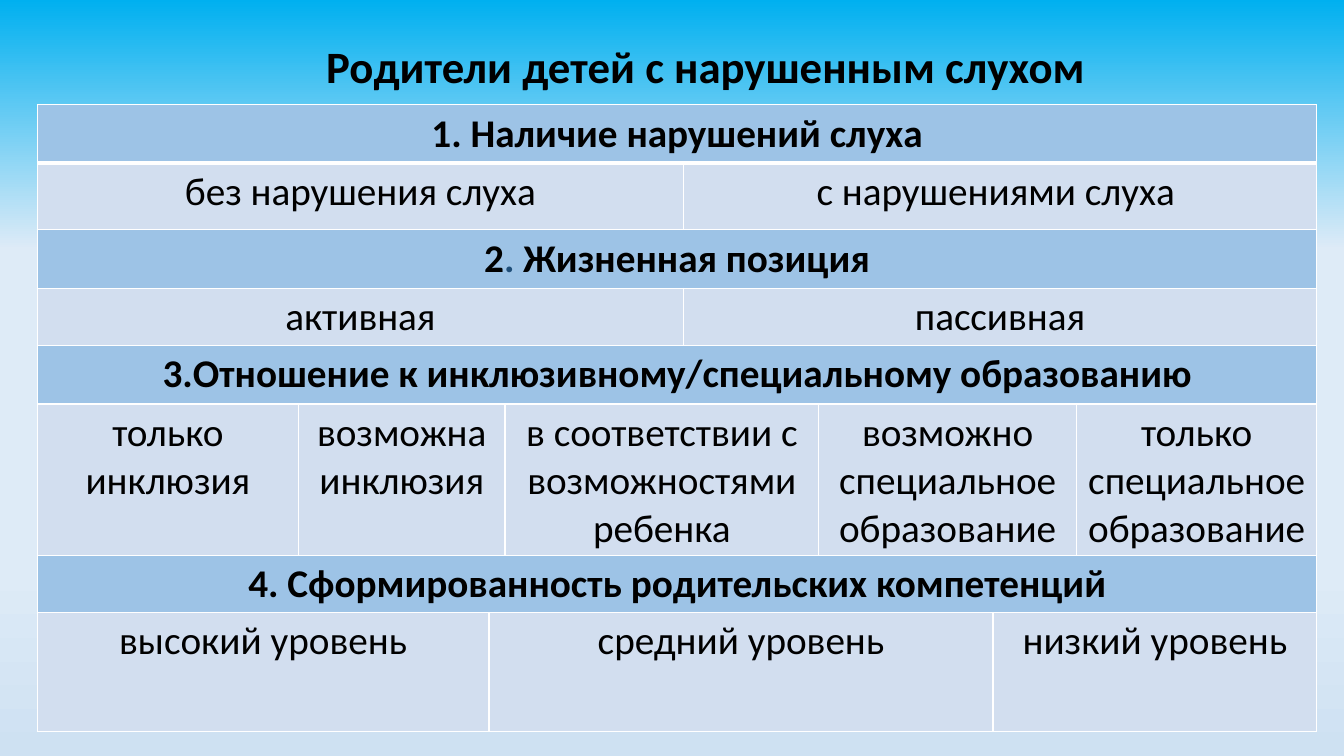
from dataclasses import dataclass
from typing import Any

from lxml.etree import SubElement
from pptx import Presentation
from pptx.dml.color import RGBColor
from pptx.enum.text import MSO_ANCHOR, PP_ALIGN
from pptx.oxml.ns import qn
from pptx.slide import Slide
from pptx.table import Table, _Cell
from pptx.text.text import _Paragraph
from pptx.util import Inches, Pt


@dataclass(frozen=True)
class Theme:
    font: str = "Calibri"
    title_size: int = 32
    table_size: int = 28
    ink: str = "000000"
    accent: str = "1F4E79"
    heading_fill: str = "9DC3E6"
    option_fill: str = "D2DEEF"
    border: str = "FFFFFF"
    thin: int = 1
    thick: int = 3
    sky: tuple[tuple[int, str], ...] = (
        (0, "00B0F0"), (33, "DEEBF7"), (75, "DEEBF7"), (100, "CEE1F2"))


@dataclass(frozen=True)
class Piece:
    text: str
    color: str


@dataclass(frozen=True)
class Option:
    text: str
    span: int


@dataclass(frozen=True)
class Criterion:
    heading: tuple[Piece, ...]
    options: tuple[Option, ...]
    heading_height: float
    options_height: float


THEME = Theme()
COLUMN_WIDTHS = (2.59, 1.89, 0.16, 1.77, 1.34, 1.73, 0.83, 2.38)
CRITERIA = (
    Criterion(
        (Piece("1. Наличие нарушений слуха", THEME.ink),),
        (Option("без нарушения слуха", 4), Option("с нарушениями слуха ", 4)),
        0.58, 0.66),
    Criterion(
        (Piece("2", THEME.ink), Piece(". ", THEME.accent),
         Piece("Жизненная позиция", THEME.ink)),
        (Option("активная", 4), Option("пассивная", 4)),
        0.58, 0.54),
    Criterion(
        (Piece("3.Отношение к инклюзивному/специальному образованию", THEME.ink),),
        (Option("только инклюзия", 1), Option("возможна инклюзия", 2),
         Option("в соответствии с возможностями ребенка", 2),
         Option("возможно специальное образование", 2),
         Option("только специальное образование ", 1)),
        0.58, 1.44),
    Criterion(
        (Piece("4. Сформированность родительских компетенций", THEME.ink),),
        (Option("высокий уровень", 2), Option("средний уровень", 4),
         Option("низкий уровень", 2)),
        0.54, 1.18),
)


def apply_format(target: Any, values: dict[str, Any]) -> None:
    for name, value in values.items():
        setattr(target, name, value)


def write_centered(paragraph: _Paragraph, pieces: tuple[Piece, ...],
                   size: int, bold: bool) -> None:
    paragraph.alignment = PP_ALIGN.CENTER
    for piece in pieces:
        run = paragraph.add_run()
        run.text = piece.text
        apply_format(run.font, {"name": THEME.font, "size": Pt(size), "bold": bold})
        run.font.color.rgb = RGBColor.from_string(piece.color)


def paint_sky(slide: Slide) -> None:
    fill = slide.background.fill
    fill.gradient()
    fill.gradient_angle = 270
    stops = next(slide.element.iter(qn("a:gsLst")))
    for stop in list(stops):
        stops.remove(stop)
    for percent, color in THEME.sky:
        stop = SubElement(stops, qn("a:gs"), pos=str(percent * 1000))
        SubElement(stop, qn("a:srgbClr"), val=color)


def add_title(slide: Slide, text: str) -> None:
    title = slide.shapes.add_textbox(
        Inches(1.25), Inches(0.23), Inches(11.5), Inches(0.9)).text_frame
    apply_format(title, {"word_wrap": True, "vertical_anchor": MSO_ANCHOR.MIDDLE})
    title.paragraphs[0].line_spacing = 0.9
    write_centered(title.paragraphs[0], (Piece(text, THEME.ink),),
                   THEME.title_size, True)


def style_cell(cell: _Cell, row: int, fill: str) -> None:
    properties = cell._tc.get_or_add_tcPr()
    widths = {
        "a:lnL": THEME.thin,
        "a:lnR": THEME.thin,
        "a:lnT": THEME.thick if row == 1 else THEME.thin,
        "a:lnB": THEME.thick if row == 0 else THEME.thin,
    }
    for side, width in widths.items():
        line = SubElement(properties, qn(side), w=str(Pt(width)))
        solid = SubElement(line, qn("a:solidFill"))
        SubElement(solid, qn("a:srgbClr"), val=THEME.border)
    cell.fill.solid()
    cell.fill.fore_color.rgb = RGBColor.from_string(fill)


def fill_band(table: Table, row: int, column: int, span: int,
              pieces: tuple[Piece, ...], fill: str, bold: bool) -> None:
    last = column + span - 1
    for index in range(column, last + 1):
        style_cell(table.cell(row, index), row, fill)
    first_cell = table.cell(row, column)
    if span > 1:
        first_cell.merge(table.cell(row, last))
    write_centered(first_cell.text_frame.paragraphs[0], pieces,
                   THEME.table_size, bold)


def add_criteria_table(slide: Slide) -> None:
    row_heights = [height for criterion in CRITERIA
                   for height in (criterion.heading_height, criterion.options_height)]
    table = slide.shapes.add_table(
        len(row_heights), len(COLUMN_WIDTHS), Inches(0.37), Inches(1.04),
        Inches(sum(COLUMN_WIDTHS)), Inches(sum(row_heights))).table
    for column, width in zip(table.columns, COLUMN_WIDTHS):
        column.width = Inches(width)
    for row, height in zip(table.rows, row_heights):
        row.height = Inches(height)
    for index, criterion in enumerate(CRITERIA):
        heading_row = 2 * index
        fill_band(table, heading_row, 0, len(COLUMN_WIDTHS),
                  criterion.heading, THEME.heading_fill, True)
        column = 0
        for option in criterion.options:
            fill_band(table, heading_row + 1, column, option.span,
                      (Piece(option.text, THEME.ink),), THEME.option_fill, False)
            column += option.span


def main() -> None:
    presentation = Presentation()
    apply_format(presentation, {"slide_width": Inches(13.33),
                                "slide_height": Inches(7.5)})
    slide = presentation.slides.add_slide(presentation.slide_layouts[6])
    paint_sky(slide)
    add_title(slide, "Родители детей с нарушенным слухом")
    add_criteria_table(slide)
    presentation.save("out.pptx")


if __name__ == "__main__":
    main()
